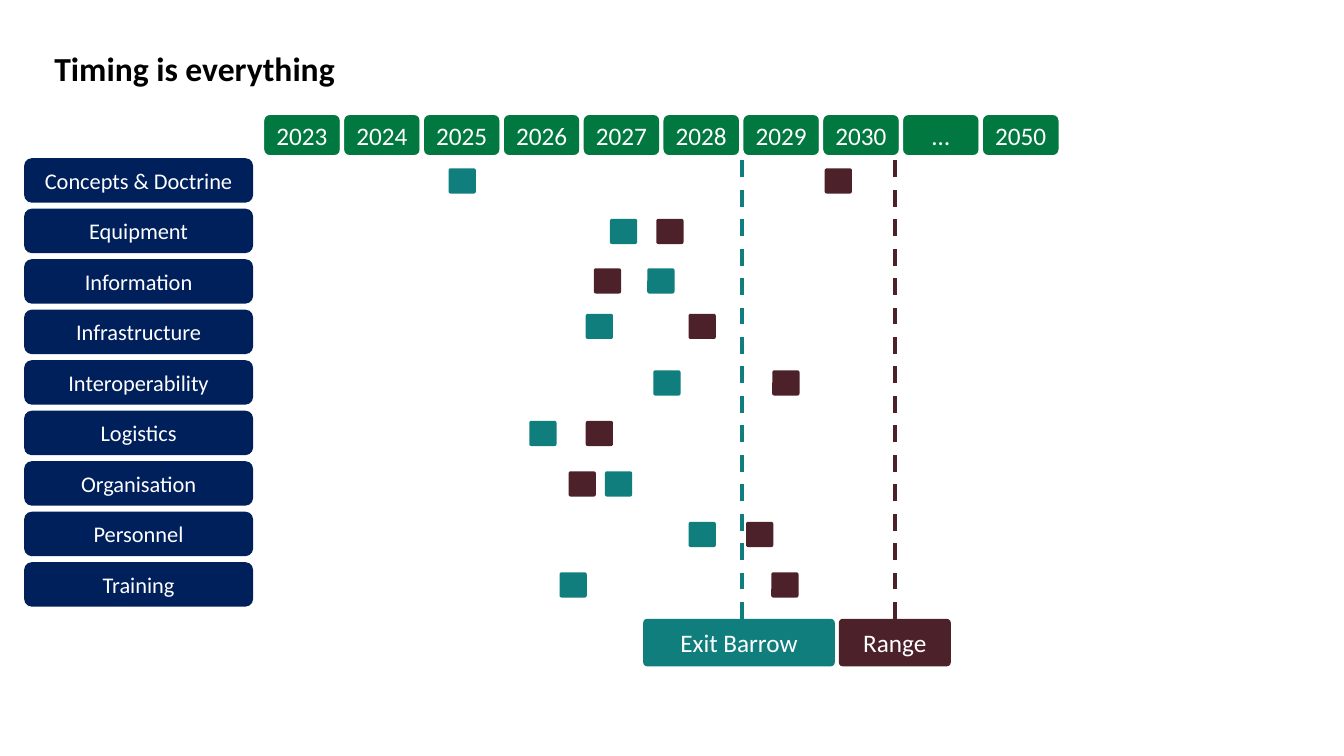
"""Build the capability timing slide: years across, capability lines down, two milestones."""
from lxml.etree import SubElement
from pptx import Presentation
from pptx.dml.color import RGBColor
from pptx.enum.dml import MSO_LINE
from pptx.enum.shapes import MSO_CONNECTOR, MSO_SHAPE
from pptx.enum.text import MSO_ANCHOR, PP_ALIGN
from pptx.oxml.ns import qn
from pptx.util import Inches, Pt

NAVY = RGBColor(0x00, 0x20, 0x5C)
GREEN = RGBColor(0x00, 0x78, 0x3F)
TEAL = RGBColor(0x10, 0x7E, 0x7D)
MAROON = RGBColor(0x4C, 0x21, 0x2A)
WHITE = RGBColor(0xFF, 0xFF, 0xFF)
BLACK = RGBColor(0x00, 0x00, 0x00)
FONT = "Calibri"

TITLE = "Timing is everything"
YEARS = ["2023", "2024", "2025", "2026", "2027", "2028", "2029", "2030", "…", "2050"]
# name, exit marker left, range marker left, marker drop below the row top
CAPABILITIES = [
    ("Concepts & Doctrine", 4.45, 8.18, 0.1),
    ("Equipment", 6.05, 6.51, 0.1),
    ("Information", 6.42, 5.89, 0.09),
    ("Infrastructure", 5.81, 6.83, 0.04),
    ("Interoperability", 6.48, 7.66, 0.1),
    ("Logistics", 5.25, 5.81, 0.1),
    ("Organisation", 6.0, 5.64, 0.1),
    ("Personnel", 6.83, 7.4, 0.1),
    ("Training", 5.55, 7.65, 0.1),
]
# name, colour, label left, label width, deadline position
MILESTONES = [
    ("Exit Barrow", TEAL, 6.38, 1.9, 7.36),
    ("Range", MAROON, 8.32, 1.11, 8.88),
]

YEAR_LEFT, YEAR_TOP, YEAR_STEP = 2.6, 1.12, 0.792
ROW_LEFT, ROW_TOP, ROW_STEP = 0.24, 1.57, 0.501
ROW_WIDTH, BAR_HEIGHT = 2.27, 0.44
MARKER_WIDTH, MARKER_HEIGHT = 0.27, 0.25
DEADLINE_TOP, MILESTONE_TOP, MILESTONE_HEIGHT = 1.56, 6.14, 0.47
TIGHT_CORNER = 0.08


def add_block(slide, left, top, width, height, fill, text="", size=18, corner=None, outline=None):
    block = slide.shapes.add_shape(
        MSO_SHAPE.ROUNDED_RECTANGLE, Inches(left), Inches(top), Inches(width), Inches(height))
    block.shadow.inherit = False
    block.fill.solid()
    block.fill.fore_color.rgb = fill
    if corner is not None:
        block.adjustments[0] = corner
    if outline is None:
        block.line.fill.background()
    else:
        block.line.color.rgb = outline
        block.line.width = Pt(3)
    if text:
        frame = block.text_frame
        frame.vertical_anchor = MSO_ANCHOR.MIDDLE
        write(frame, text, size, WHITE, PP_ALIGN.CENTER)


def write(frame, text, size, color, align, bold=False):
    frame.word_wrap = True
    paragraph = frame.paragraphs[0]
    paragraph.text = text
    paragraph.alignment = align
    paragraph.font.name = FONT
    paragraph.font.size = Pt(size)
    paragraph.font.bold = bold
    paragraph.font.color.rgb = color
    return paragraph


def add_deadline(slide, x, color):
    deadline = slide.shapes.add_connector(
        MSO_CONNECTOR.STRAIGHT, Inches(x), Inches(MILESTONE_TOP), Inches(x), Inches(DEADLINE_TOP))
    deadline.line.color.rgb = color
    deadline.line.width = Pt(3)
    deadline.line.dash_style = MSO_LINE.DASH
    SubElement(deadline._element.spPr, qn("a:effectLst"))


def main():
    deck = Presentation()
    deck.slide_width, deck.slide_height = Inches(13.33), Inches(7.5)
    slide = deck.slides.add_slide(deck.slide_layouts[6])

    title = slide.shapes.add_textbox(Inches(0.44), Inches(0.47), Inches(9.55), Inches(0.59))
    heading = write(title.text_frame, TITLE, 24, BLACK, PP_ALIGN.LEFT, bold=True)
    heading.line_spacing = 0.9

    row_tops = [ROW_TOP + row * ROW_STEP for row in range(len(CAPABILITIES))]
    for top, (capability, *_) in zip(row_tops, CAPABILITIES):
        add_block(slide, ROW_LEFT, top, ROW_WIDTH, BAR_HEIGHT, NAVY, capability, size=16)

    for column, year in enumerate(YEARS):
        add_block(slide, YEAR_LEFT + column * YEAR_STEP, YEAR_TOP, YEAR_STEP, BAR_HEIGHT,
                  GREEN, year, outline=WHITE)

    for index, (milestone, color, left, width, deadline) in enumerate(MILESTONES):
        add_deadline(slide, deadline, color)
        add_block(slide, left, MILESTONE_TOP, width, MILESTONE_HEIGHT, color, milestone,
                  corner=TIGHT_CORNER)
        for top, (_, *marker_lefts, drop) in zip(row_tops, CAPABILITIES):
            add_block(slide, marker_lefts[index], top + drop, MARKER_WIDTH, MARKER_HEIGHT,
                      color, corner=TIGHT_CORNER)

    deck.save("out.pptx")


if __name__ == "__main__":
    main()
